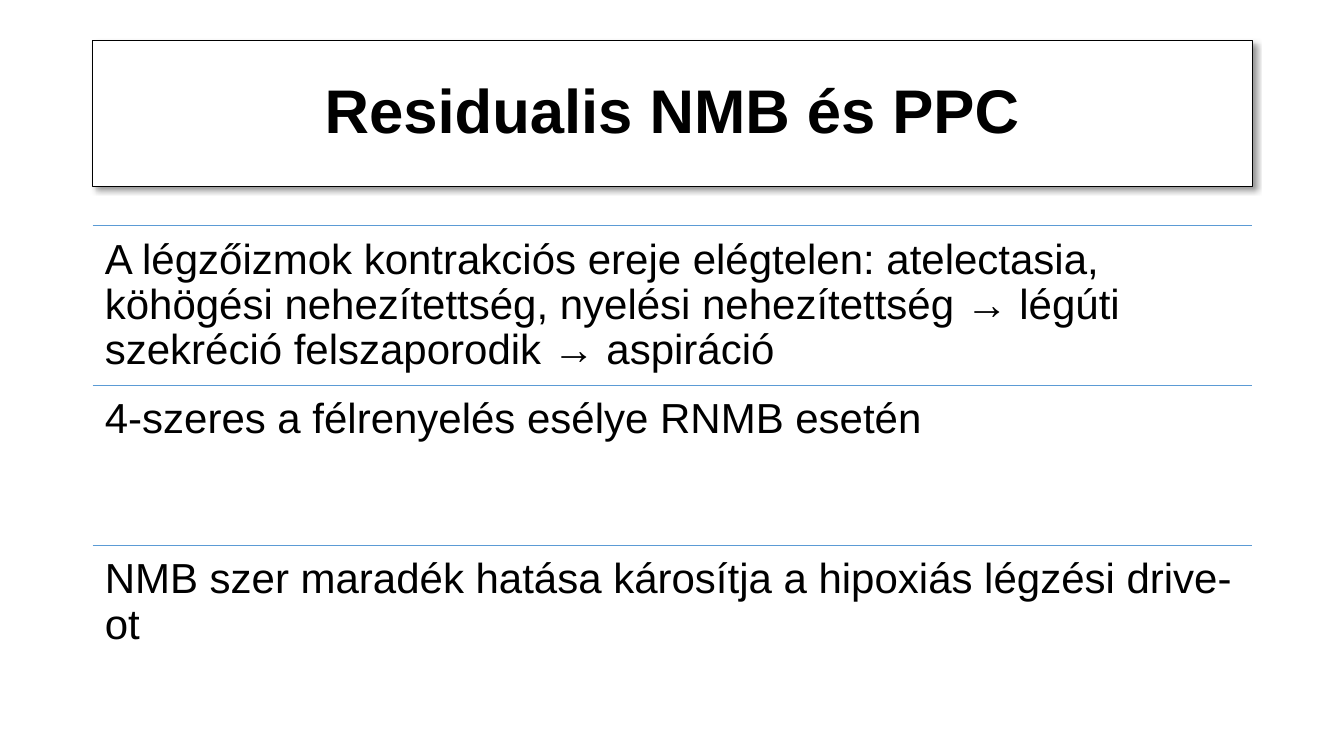
from lxml import etree
from pptx import Presentation
from pptx.dml.color import RGBColor
from pptx.enum.shapes import MSO_CONNECTOR, MSO_SHAPE
from pptx.enum.text import MSO_ANCHOR, PP_ALIGN
from pptx.oxml import parse_xml
from pptx.oxml.ns import nsdecls, qn
from pptx.util import Inches, Pt

RECTANGLE = MSO_SHAPE.RECTANGLE
STRAIGHT = MSO_CONNECTOR.STRAIGHT
MIDDLE, TOP = MSO_ANCHOR.MIDDLE, MSO_ANCHOR.TOP
CENTER, LEFT = PP_ALIGN.CENTER, PP_ALIGN.LEFT

COLORS = {"paper": "FFFFFF", "ink": "000000", "rule": "5B9BD5"}
FONT = "Arial"

MARGIN, CONTENT_WIDTH = Inches(0.92), Inches(11.5)
TITLE_TOP, TITLE_HEIGHT = Inches(0.4), Inches(1.45)
ROWS_TOP, ROW_HEIGHT = Inches(2.24), Inches(1.585)

STATEMENTS = [
    "A légzőizmok kontrakciós ereje elégtelen: atelectasia, köhögési nehezítettség, "
    "nyelési nehezítettség → légúti szekréció felszaporodik → aspiráció",
    "4-szeres a félrenyelés esélye RNMB esetén",
    "NMB szer maradék hatása károsítja a hipoxiás légzési drive-ot",
]


def color(name):
    return RGBColor.from_string(COLORS[name])


def write(holder, text, size, bold, align, anchor, inset):
    frame = holder.text_frame
    frame.word_wrap = True
    frame.vertical_anchor = anchor
    for side in ("left", "top", "right", "bottom"):
        setattr(frame, f"margin_{side}", Inches(inset))
    paragraph = frame.paragraphs[0]
    paragraph.alignment = align
    paragraph.line_spacing = 0.9
    run = paragraph.add_run()
    run.text = text
    for key, value in {"name": FONT, "size": Pt(size), "bold": bold}.items():
        setattr(run.font, key, value)
    run.font.color.rgb = color("ink")


prs = Presentation()
prs.slide_width, prs.slide_height = Inches(13.33), Inches(7.5)
slide = prs.slides.add_slide(prs.slide_layouts[6])

# Title box with a soft shadow to the lower right
title = slide.shapes.add_shape(RECTANGLE, MARGIN, TITLE_TOP, CONTENT_WIDTH, TITLE_HEIGHT)
title.fill.solid()
title.fill.fore_color.rgb = color("paper")
title.line.color.rgb = color("ink")
title.line.width = Pt(0.75)
title.shadow.inherit = False
effects = title._element.spPr.find(qn("a:effectLst"))
effects.append(parse_xml(
    f'<a:outerShdw {nsdecls("a")} blurRad="{Pt(4)}" dist="{Pt(3)}" dir="2700000" '
    f'algn="tl" rotWithShape="0"><a:srgbClr val="{COLORS["ink"]}">'
    '<a:alpha val="40000"/></a:srgbClr></a:outerShdw>'))
write(title, "Residualis NMB és PPC", 44, True, CENTER, MIDDLE, 0.1)

# Ruled rows, one statement each
for row, statement in enumerate(STATEMENTS):
    top = ROWS_TOP + row * ROW_HEIGHT
    rule = slide.shapes.add_connector(STRAIGHT, MARGIN, top, MARGIN + CONTENT_WIDTH, top)
    rule.line.color.rgb = color("rule")
    rule.line.width = Pt(1)
    etree.SubElement(rule._element.spPr, qn("a:effectLst"))
    box = slide.shapes.add_textbox(MARGIN, top, CONTENT_WIDTH, ROW_HEIGHT)
    write(box, statement, 30, False, LEFT, TOP, 0.12)

prs.save("out.pptx")
